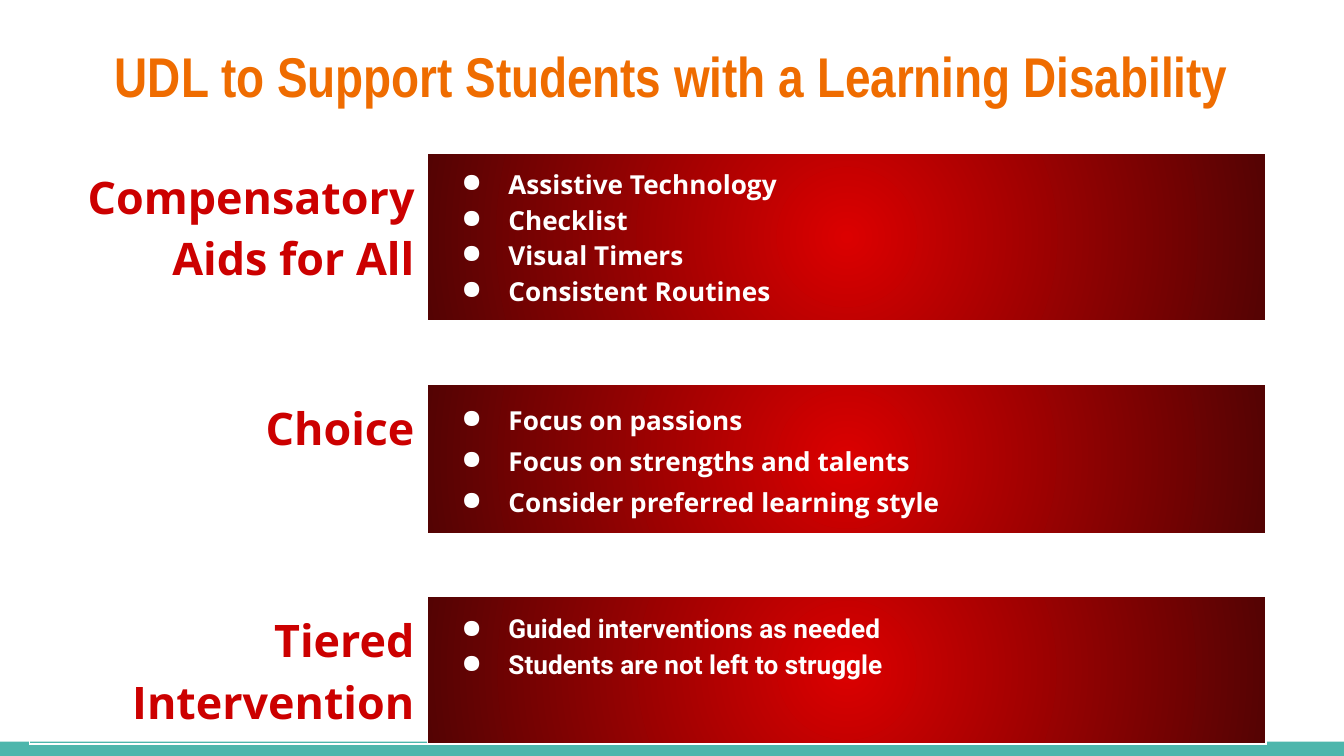
from lxml import etree
from pptx import Presentation
from pptx.dml.color import RGBColor
from pptx.enum.shapes import MSO_SHAPE
from pptx.enum.text import PP_ALIGN
from pptx.oxml.ns import qn
from pptx.util import Pt

RECT = MSO_SHAPE.RECTANGLE
CENTER, RIGHT = PP_ALIGN.CENTER, PP_ALIGN.RIGHT

COLORS = {"title": "EF6C00", "heading": "CC0000", "white": "FFFFFF",
          "footer": "4DB6AC", "glow": "DB0000", "edge": "540303"}

TITLE = "UDL to Support Students with a Learning Disability"
STRATEGIES = [
    {"heading": "Compensatory Aids for All", "height": 90, "font": "Open Sans", "spacing": 1,
     "points": ["Assistive Technology", "Checklist", "Visual Timers", "Consistent Routines"]},
    {"heading": "Choice", "height": 80, "font": "Open Sans", "spacing": 1.15,
     "points": ["Focus on passions", "Focus on strengths and talents",
                "Consider preferred learning style"]},
    {"heading": "Tiered Intervention", "height": 79, "font": "Roboto", "spacing": 1.15,
     "points": ["Guided interventions as needed", "Students are not left to struggle"]},
]

SLIDE_W, SLIDE_H = 720, 405
FOOTER_H = 7.7
TABLE_LEFT, TABLE_TOP = 16, 82
COLUMNS = [213.2, 449]
GAP = 33.8
INSET = 7.2


def rgb(name):
    return RGBColor.from_string(COLORS[name])


def write(p, text, font, size, color):
    p.text = text
    p.font.name, p.font.size, p.font.bold = font, Pt(size), True
    p.font.color.rgb = rgb(color)


def add_bullet(p):
    pPr = p._p.get_or_add_pPr()
    pPr.set("marL", str(Pt(36)))
    pPr.set("indent", str(-Pt(25.2)))
    color = etree.Element(qn("a:buClr"))
    etree.SubElement(color, qn("a:srgbClr"), val=COLORS["white"])
    char = etree.Element(qn("a:buChar"), char="●")
    defaults = pPr.find(qn("a:defRPr"))
    defaults.addprevious(color)
    defaults.addprevious(char)


def add_borders(cell):
    tcPr = cell._tc.get_or_add_tcPr()
    for side in ("lnL", "lnR", "lnT", "lnB"):
        line = etree.SubElement(tcPr, qn(f"a:{side}"), w=str(Pt(0.75)))
        solid = etree.SubElement(line, qn("a:solidFill"))
        etree.SubElement(solid, qn("a:srgbClr"), val=COLORS["white"])


def fill_radial(cell):
    cell.fill.gradient()
    for stop, name, position in zip(cell.fill.gradient_stops, ("glow", "edge"), (0, 1)):
        stop.color.rgb = rgb(name)
        stop.position = position
    grad = cell._tc.tcPr.find(qn("a:gradFill"))
    grad.remove(grad.find(qn("a:lin")))
    circle = etree.SubElement(grad, qn("a:path"), path="circle")
    etree.SubElement(circle, qn("a:fillToRect"), l="50000", t="50000", r="50000", b="50000")


def set_margins(box, inset):
    box.margin_left = box.margin_right = box.margin_top = box.margin_bottom = Pt(inset)


prs = Presentation()
prs.slide_width, prs.slide_height = Pt(SLIDE_W), Pt(SLIDE_H)
s = prs.slides.add_slide(prs.slide_layouts[6])

footer = s.shapes.add_shape(RECT, 0, Pt(SLIDE_H - FOOTER_H), Pt(SLIDE_W), Pt(FOOTER_H))
footer.shadow.inherit = False
footer.fill.solid()
footer.fill.fore_color.rgb = rgb("footer")
footer.line.fill.background()

tf = s.shapes.add_textbox(Pt(24.5), Pt(15), Pt(671), Pt(50.4)).text_frame
tf.word_wrap = True
set_margins(tf, INSET)
write(tf.paragraphs[0], TITLE, "Arial Narrow", 30, "title")
tf.paragraphs[0].alignment = CENTER

heights = [GAP] * (2 * len(STRATEGIES) - 1)
heights[::2] = [strategy["height"] for strategy in STRATEGIES]
table = s.shapes.add_table(len(heights), len(COLUMNS), Pt(TABLE_LEFT), Pt(TABLE_TOP),
                           Pt(sum(COLUMNS)), Pt(sum(heights))).table
table.first_row = table.horz_banding = False
for column, width in zip(table.columns, COLUMNS):
    column.width = Pt(width)
for row, height in zip(table.rows, heights):
    row.height = Pt(height)
for cell in table.iter_cells():
    add_borders(cell)
    cell.fill.background()
    set_margins(cell, 0)

for i, strategy in enumerate(STRATEGIES):
    heading, details = table.cell(2 * i, 0), table.cell(2 * i, 1)
    set_margins(heading, INSET)
    set_margins(details, INSET)
    p = heading.text_frame.paragraphs[0]
    write(p, strategy["heading"], "Open Sans", 24, "heading")
    p.alignment = RIGHT
    fill_radial(details)
    tf = details.text_frame
    for j, point in enumerate(strategy["points"]):
        p = tf.add_paragraph() if j else tf.paragraphs[0]
        write(p, point, strategy["font"], 14, "white")
        p.line_spacing = strategy["spacing"]
        add_bullet(p)

for row in range(1, len(heights), 2):
    gap = table.cell(row, 1)
    gap.fill.solid()
    gap.fill.fore_color.rgb = rgb("white")

prs.save("out.pptx")
